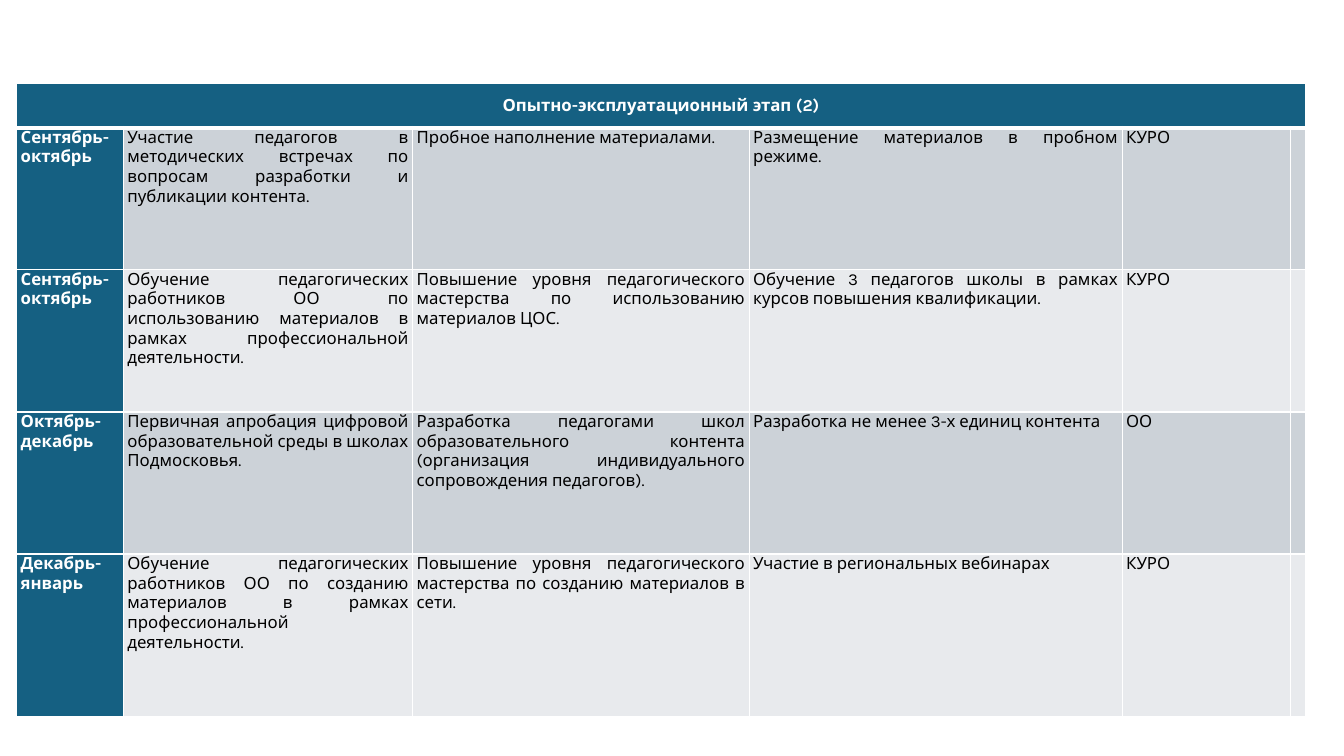
from lxml.etree import SubElement
from pptx import Presentation
from pptx.dml.color import RGBColor
from pptx.enum.text import MSO_ANCHOR as Anchor, PP_ALIGN as Align
from pptx.oxml.ns import qn
from pptx.util import Cm, Pt

TEAL = RGBColor(0x15, 0x60, 0x82)
GREY = RGBColor(0xCC, 0xD2, 0xD8)
PALE = RGBColor(0xE8, 0xEA, 0xED)
WHITE = RGBColor(0xFF, 0xFF, 0xFF)
BLACK = RGBColor(0, 0, 0)

STAGE = "Опытно-эксплуатационный этап (2)"
ACTIVITIES = [
    ("Сентябрь-октябрь",
     "Участие педагогов в методических встречах по вопросам разработки и публикации контента.",
     "Пробное наполнение материалами.",
     "Размещение материалов в пробном режиме.",
     "КУРО", ""),
    ("Сентябрь-октябрь",
     "Обучение педагогических работников ОО по использованию материалов в рамках профессиональной деятельности.",
     "Повышение уровня педагогического мастерства по использованию материалов ЦОС.",
     "Обучение 3 педагогов школы в рамках курсов повышения квалификации.",
     "КУРО", ""),
    ("Октябрь-декабрь",
     "Первичная апробация цифровой образовательной среды в школах Подмосковья.",
     "Разработка педагогами школ образовательного контента (организация индивидуального сопровождения педагогов).",
     "Разработка не менее 3-х единиц контента",
     "ОО", ""),
    ("Декабрь-январь",
     "Обучение педагогических работников ОО по созданию материалов в рамках профессиональной деятельности.",
     "Повышение уровня педагогического мастерства по созданию материалов в сети.",
     "Участие в региональных вебинарах",
     "КУРО", ""),
]
COLUMN_WIDTHS = [2.69, 7.29, 8.48, 9.4, 4.24, 0.38]
ROW_HEIGHTS = [1.12, 3.58, 3.58, 3.58, 4.09]

CELL_FORMAT = {"margin_left": Cm(0.1), "margin_right": Cm(0.1),
               "margin_top": 0, "margin_bottom": 0}
HEADING_FONT = {"name": "Karla", "size": Pt(12), "bold": True}
BODY_FONT = {**HEADING_FONT, "bold": False}


def apply_format(target, values):
    for name, value in values.items():
        setattr(target, name, value)


def draw_borders(cell, top=1, bottom=1):
    properties = cell._tc.get_or_add_tcPr()
    for side, points in {"lnL": 1, "lnR": 1, "lnT": top, "lnB": bottom}.items():
        border = SubElement(properties, qn(f"a:{side}"), w=str(Pt(points)))
        colour = SubElement(border, qn("a:solidFill"))
        SubElement(colour, qn("a:srgbClr"), val=str(WHITE))


def fill_cell(cell, wording, background, heading=False, align=Align.JUSTIFY):
    apply_format(cell, CELL_FORMAT)
    cell.fill.solid()
    cell.fill.fore_color.rgb = background
    cell.text = wording
    paragraph = cell.text_frame.paragraphs[0]
    paragraph.alignment = align
    apply_format(paragraph.font, HEADING_FONT if heading else BODY_FONT)
    paragraph.font.color.rgb = WHITE if heading else BLACK


def add_plan(slide):
    plan = slide.shapes.add_table(
        len(ROW_HEIGHTS), len(COLUMN_WIDTHS), Cm(0.42), Cm(2.1),
        Cm(sum(COLUMN_WIDTHS)), Cm(sum(ROW_HEIGHTS))).table
    for column, width in zip(plan.columns, COLUMN_WIDTHS):
        column.width = Cm(width)
    for row, height in zip(plan.rows, ROW_HEIGHTS):
        row.height = Cm(height)

    for cell in plan.rows[0].cells:
        draw_borders(cell, bottom=3)
    stage = plan.cell(0, 0)
    stage.merge(plan.cell(0, len(COLUMN_WIDTHS) - 1))
    fill_cell(stage, STAGE, TEAL, heading=True, align=Align.CENTER)
    stage.vertical_anchor = Anchor.MIDDLE

    for row, activity in enumerate(ACTIVITIES, start=1):
        band = GREY if row % 2 else PALE
        for column, wording in enumerate(activity):
            cell = plan.cell(row, column)
            draw_borders(cell, top=3 if row == 1 else 1)
            is_period = column == 0
            fill_cell(cell, wording, TEAL if is_period else band, is_period)


def main():
    deck = Presentation()
    deck.slide_width = Cm(33.87)
    deck.slide_height = Cm(19.05)
    add_plan(deck.slides.add_slide(deck.slide_layouts[6]))
    deck.save("out.pptx")


if __name__ == "__main__":
    main()
